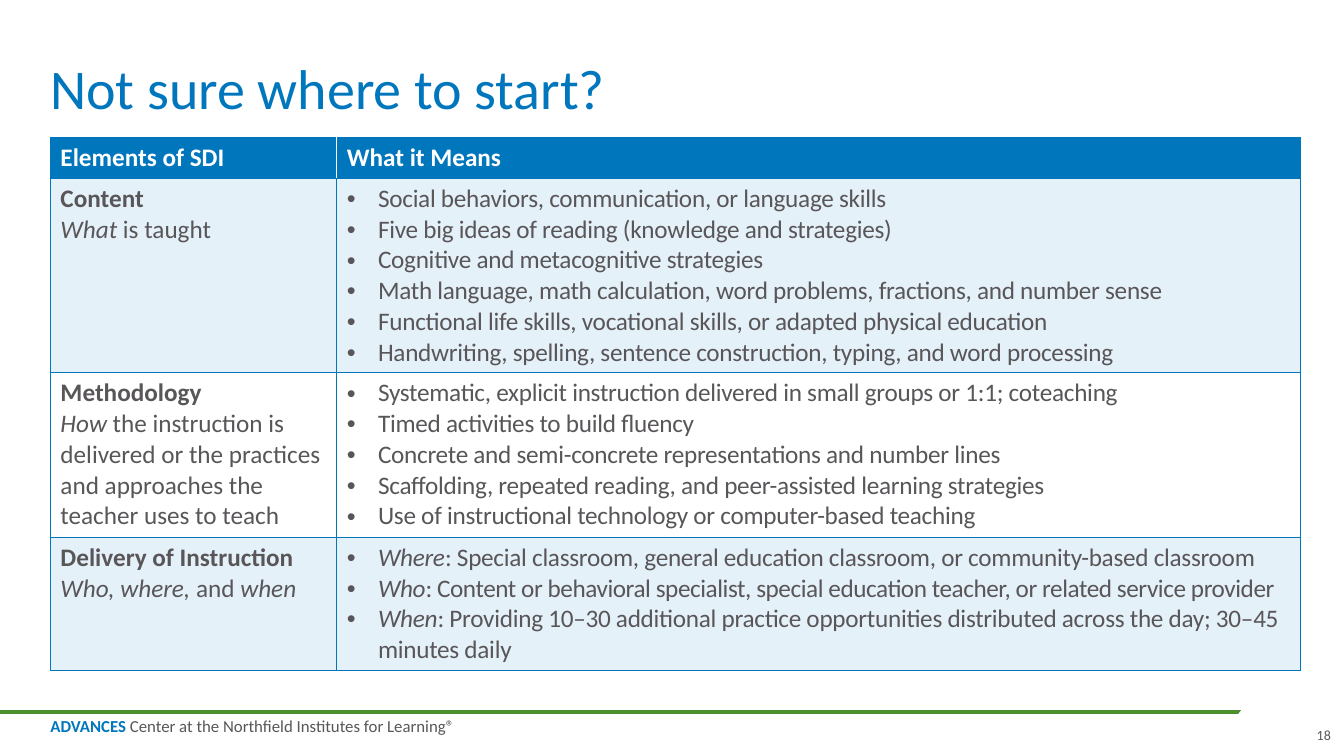
from lxml.etree import SubElement
from pptx import Presentation
from pptx.dml.color import RGBColor
from pptx.enum.shapes import MSO_CONNECTOR, MSO_SHAPE
from pptx.enum.text import MSO_ANCHOR, PP_ALIGN
from pptx.oxml.ns import qn
from pptx.util import Inches, Pt

BLUE, GREY, PALE, GREEN, WHITE = "0076BD", "59565A", "E5F1F8", "4C902D", "FFFFFF"
TIGHT, TIGHTER = -20, -30

ROWS = [
    (1.93, "Content", "*What* is taught", [
        "Social behaviors, communication, or language skills",
        "Five big ideas of reading (knowledge and strategies)",
        "Cognitive and metacognitive strategies",
        "Math language, math calculation, word problems, fractions, and number sense",
        "Functional life skills, vocational skills, or adapted physical education",
        "Handwriting, spelling, sentence construction, typing, and word processing",
    ]),
    (1.63, "Methodology",
     "*How* the instruction is delivered or the practices and approaches the teacher uses to teach", [
         "Systematic, explicit instruction delivered in small groups or 1:1; coteaching",
         "Timed activities to build fluency",
         "Concrete and semi-concrete representations and number lines",
         "Scaffolding, repeated reading, and peer-assisted learning strategies",
         "Use of instructional technology or computer-based teaching",
     ]),
    (1.32, "Delivery of Instruction", "*Who, where,* and *when*", [
        "*Where*: Special classroom, general education classroom, or community-based classroom",
        ("*Who*: Content or behavioral specialist, special education teacher, "
         "or related service provider", TIGHTER),
        "*When*: Providing 10–30 additional practice opportunities distributed across the day; "
        "30–45 minutes daily",
    ]),
]


def color(code):
    """Turn a hex string into a colour."""
    return RGBColor.from_string(code)


def write(para, text, size, code, bold=False, space=0):
    """Add runs to a paragraph, with starred parts in italics."""
    for i, part in enumerate(text.split("*")):
        if not part:
            continue
        run = para.add_run()
        run.text = part
        font = run.font
        font.name, font.size, font.bold, font.italic = "Calibri", Pt(size), bold, i % 2 == 1
        font.color.rgb = color(code)
        if space:
            run._r.get_or_add_rPr().set("spc", str(space))


def label(slide, box, anchor=MSO_ANCHOR.TOP, wrap=False):
    """Add a text box without insets and return its first paragraph."""
    frame = slide.shapes.add_textbox(*map(Inches, box)).text_frame
    frame.margin_left = frame.margin_right = frame.margin_top = frame.margin_bottom = 0
    frame.vertical_anchor, frame.word_wrap = anchor, wrap
    return frame.paragraphs[0]


def bullet(para):
    """Give a paragraph a hanging bullet."""
    props = para._p.get_or_add_pPr()
    props.set("marL", str(Inches(0.31)))
    props.set("indent", str(-Inches(0.31)))
    SubElement(props, qn("a:buFont")).set("typeface", "Arial")
    SubElement(props, qn("a:buChar")).set("char", "•")


def paint(cell, fill, **edges):
    """Set the borders and fill of a cell."""
    props = cell._tc.get_or_add_tcPr()
    for side in "LRTB":
        line = SubElement(props, qn(f"a:ln{side}"), w=str(Pt(0.75)))
        solid = SubElement(line, qn("a:solidFill"))
        SubElement(solid, qn("a:srgbClr")).set("val", edges.get(side, BLUE))
    cell.fill.solid()
    cell.fill.fore_color.rgb = color(fill)


def title(slide, box):
    """Place the slide title at the bottom of its box."""
    para = label(slide, box, MSO_ANCHOR.BOTTOM, True)
    para.line_spacing = 0.9
    write(para, "Not sure where to start?", 40, BLUE)


def grid(slide, box):
    """Place the table of elements and their meanings."""
    table = slide.shapes.add_table(len(ROWS) + 1, 2, *map(Inches, box)).table
    first = 2.84
    for col, width in zip(table.columns, (first, box[2] - first)):
        col.width = Inches(width)
    table.rows[0].height = Inches(0.41)
    heads = ("Elements of SDI", {"R": WHITE}), ("What it Means", {"L": WHITE})
    for cell, (text, edges) in zip(table.rows[0].cells, heads):
        paint(cell, BLUE, **edges)
        write(cell.text_frame.paragraphs[0], text, 18, WHITE, True)
    for i, (height, name, note, items) in enumerate(ROWS, 1):
        table.rows[i].height = Inches(height)
        left, right = table.rows[i].cells
        for cell in (left, right):
            paint(cell, PALE if i % 2 else WHITE)
        write(left.text_frame.paragraphs[0], name, 18, GREY, True)
        write(left.text_frame.add_paragraph(), note, 18, GREY)
        frame = right.text_frame
        for j, item in enumerate(items):
            text, space = (item, TIGHT) if isinstance(item, str) else item
            para = frame.add_paragraph() if j else frame.paragraphs[0]
            bullet(para)
            write(para, text, 18, GREY, space=space)


def footer(slide, box):
    """Place the rule with its slanted end, the credit and the page number."""
    x, y, width, _ = box
    rule = slide.shapes.add_connector(
        MSO_CONNECTOR.STRAIGHT, *map(Inches, (x, y, x + 13, y)))
    rule.line.color.rgb, rule.line.width = color(GREEN), Pt(3)
    SubElement(rule._element.spPr, qn("a:effectLst"))
    oval = slide.shapes.add_shape(
        MSO_SHAPE.OVAL, *map(Inches, (x + 12.16, y - 0.29, 1.19, 0.58)))
    oval.rotation = 332.1
    oval.shadow.inherit = False
    oval.fill.solid()
    oval.fill.fore_color.rgb = color(WHITE)
    oval.line.fill.background()
    para = label(slide, (x + 0.5, y + 0.07, 4.02, 0.17))
    para.line_spacing = 0.85
    write(para, "ADVANCES", 12, BLUE, True)
    write(para, " Center at the Northfield Institutes for Learning®", 12, GREY)
    page = label(slide, (x + width - 0.3, y + 0.14, 0.17, 0.17), MSO_ANCHOR.BOTTOM)
    page.alignment = PP_ALIGN.RIGHT
    write(page, "18", 10, GREY)


def main():
    """Build and save the slide."""
    deck = Presentation()
    deck.slide_width, deck.slide_height = Inches(13.33), Inches(7.5)
    slide = deck.slides.add_slide(deck.slide_layouts[6])
    footer(slide, (0, 7.06, 13.33, 0.44))
    title(slide, (0.5, 0, 12.4, 1.21))
    grid(slide, (0.5, 1.36, 12.4, 5.29))
    deck.save("out.pptx")


if __name__ == "__main__":
    main()
